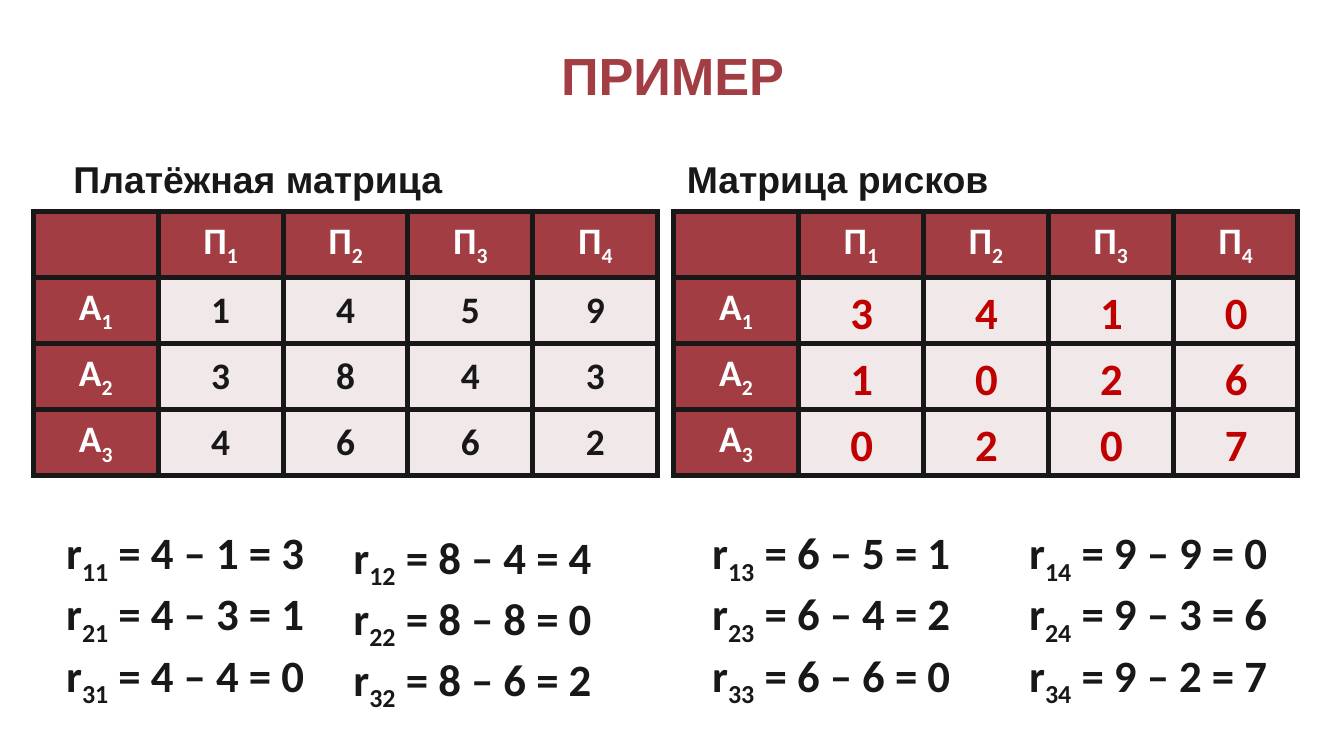
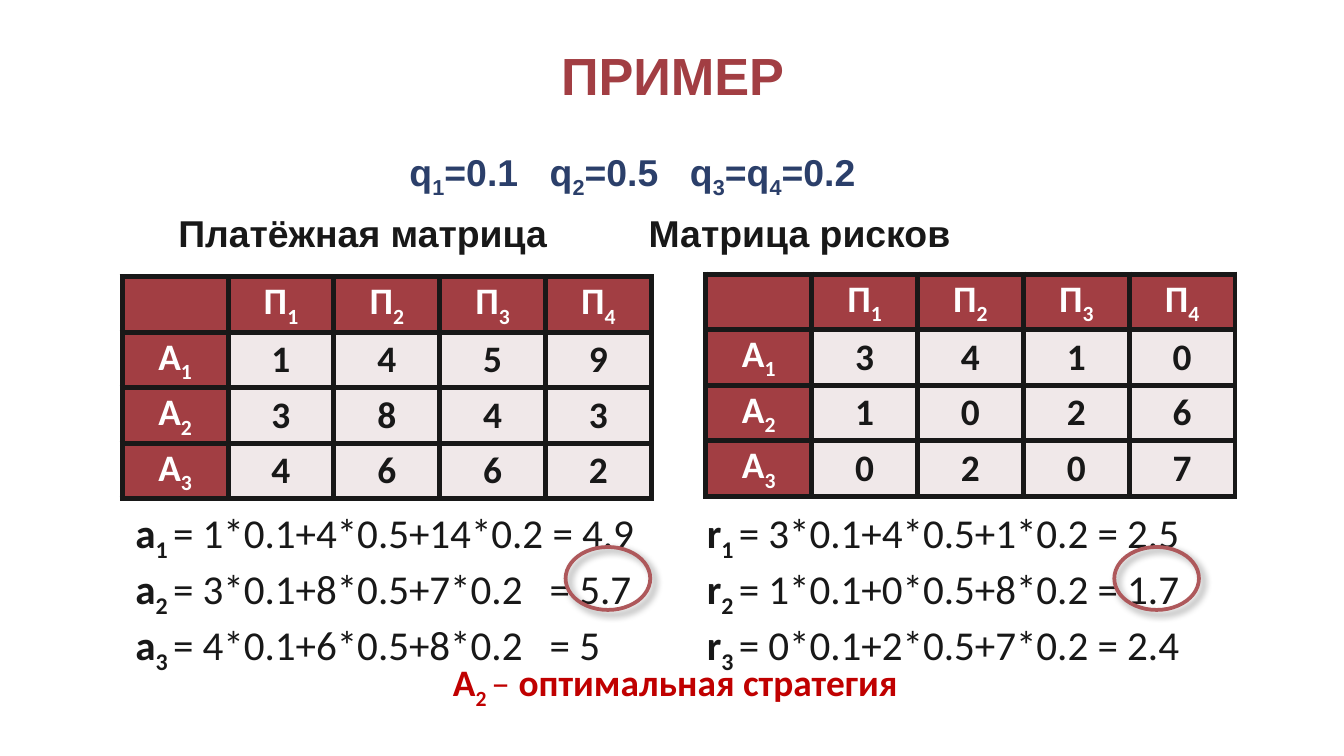
from dataclasses import dataclass

from pptx import Presentation
from pptx.dml.color import RGBColor
from pptx.enum.shapes import MSO_SHAPE
from pptx.enum.text import MSO_ANCHOR, MSO_AUTO_SIZE, PP_ALIGN
from pptx.oxml import parse_xml
from pptx.oxml.ns import nsdecls
from pptx.slide import Slide
from pptx.text.text import _Paragraph
from pptx.util import Cm, Pt

LEFT, CENTER, JUSTIFY = PP_ALIGN.LEFT, PP_ALIGN.CENTER, PP_ALIGN.JUSTIFY
TOP, MIDDLE = MSO_ANCHOR.TOP, MSO_ANCHOR.MIDDLE
GROW, FIXED = MSO_AUTO_SIZE.SHAPE_TO_FIT_TEXT, MSO_AUTO_SIZE.NONE
ELLIPSE = MSO_SHAPE.OVAL

MAROON = RGBColor(0xA2, 0x3E, 0x43)
ROSE = RGBColor(0xAE, 0x58, 0x5B)
PALE = RGBColor(0xF0, 0xE8, 0xE9)
INK = RGBColor(0x18, 0x18, 0x18)
NAVY = RGBColor(0x2B, 0x3F, 0x6A)
RED = RGBColor(0xC0, 0x00, 0x00)
WHITE = RGBColor(0xFF, 0xFF, 0xFF)

HEADING_FONT, BODY_FONT = "Arial", "Calibri"

PAYOFFS = [[1, 4, 5, 9], [3, 8, 4, 3], [4, 6, 6, 2]]
COLUMN_MAXIMA = [max(column) for column in zip(*PAYOFFS)]
RISKS = [[best - value for best, value in zip(COLUMN_MAXIMA, row)] for row in PAYOFFS]


@dataclass(frozen=True)
class Label:
    """A text box; lengths are centimetres. See write_markup for the text."""
    lines: list[str]
    left: float
    top: float
    width: float
    height: float
    size: float = 20
    color: RGBColor = INK
    font: str = BODY_FONT
    align: PP_ALIGN = LEFT
    anchor: MSO_ANCHOR = TOP
    auto_size: MSO_AUTO_SIZE = GROW
    wrap: bool = True
    tabs: tuple[float, ...] = ()


@dataclass(frozen=True)
class Matrix:
    """A strategy table; values may be None to leave the body cells empty."""
    values: list[list[int]] | None
    left: float
    top: float
    column_width: float
    row_height: float


TITLE = Label(["ПРИМЕР"], 1, 0.53, 23.42, 1.78, 28, MAROON, HEADING_FONT,
              CENTER, MIDDLE, FIXED)


def write_markup(paragraph: _Paragraph, text: str, size: float,
                 color: RGBColor, font: str) -> None:
    """Write bold text; "|" toggles the weight and "~" toggles subscript."""
    for weight_index, segment in enumerate(text.split("|")):
        for script_index, piece in enumerate(segment.split("~")):
            if not piece:
                continue
            run = paragraph.add_run()
            run.text = piece
            formats = {"name": font, "size": Pt(size), "bold": weight_index % 2 == 0}
            for attribute, value in formats.items():
                setattr(run.font, attribute, value)
            run.font.color.rgb = color
            if script_index % 2:
                run._r.get_or_add_rPr().set("baseline", "-25000")


def set_tabs(paragraph: _Paragraph, positions: tuple[float, ...]) -> None:
    stops = "".join(f'<a:tab pos="{Cm(position)}" algn="l"/>' for position in positions)
    paragraph._p.get_or_add_pPr().append(
        parse_xml(f'<a:tabLst {nsdecls("a")}>{stops}</a:tabLst>'))


def add_label(slide: Slide, label: Label) -> None:
    box = slide.shapes.add_textbox(Cm(label.left), Cm(label.top),
                                   Cm(label.width), Cm(label.height))
    frame = box.text_frame
    formats = {"word_wrap": label.wrap, "auto_size": label.auto_size,
               "vertical_anchor": label.anchor}
    for attribute, value in formats.items():
        setattr(frame, attribute, value)
    for index, line in enumerate(label.lines):
        paragraph = frame.add_paragraph() if index else frame.paragraphs[0]
        paragraph.alignment = label.align
        if label.tabs:
            set_tabs(paragraph, label.tabs)
        write_markup(paragraph, line, label.size, label.color, label.font)


def add_borders(cell) -> None:
    properties = cell._tc.get_or_add_tcPr()
    for index, side in enumerate(("lnL", "lnR", "lnT", "lnB")):
        properties.insert(index, parse_xml(
            f'<a:{side} {nsdecls("a")} w="{Pt(3)}"><a:solidFill>'
            f'<a:srgbClr val="{INK}"/></a:solidFill></a:{side}>'))


def add_matrix(slide: Slide, matrix: Matrix) -> None:
    rows, columns = len(PAYOFFS) + 1, len(PAYOFFS[0]) + 1
    table = slide.shapes.add_table(
        rows, columns, Cm(matrix.left), Cm(matrix.top),
        Cm(matrix.column_width * columns), Cm(matrix.row_height * rows)).table
    for column in table.columns:
        column.width = Cm(matrix.column_width)
    for row in table.rows:
        row.height = Cm(matrix.row_height)
    cell_formats = {"margin_left": Cm(0.18), "margin_right": Cm(0.18),
                    "margin_top": 0, "margin_bottom": 0, "vertical_anchor": MIDDLE}
    for row in range(rows):
        for column in range(columns):
            cell = table.cell(row, column)
            is_header = row == 0 or column == 0
            if row == column == 0:
                text = ""
            elif row == 0:
                text = f"П~{column}~"
            elif column == 0:
                text = f"A~{row}~"
            else:
                text = str(matrix.values[row - 1][column - 1]) if matrix.values else ""
            for attribute, value in cell_formats.items():
                setattr(cell, attribute, value)
            cell.fill.solid()
            cell.fill.fore_color.rgb = MAROON if is_header else PALE
            add_borders(cell)
            paragraph = cell.text_frame.paragraphs[0]
            paragraph.alignment = CENTER
            write_markup(paragraph, text, 20, WHITE if is_header else INK, BODY_FONT)


def add_answer_ring(slide: Slide, left: float) -> None:
    ring = slide.shapes.add_shape(ELLIPSE, Cm(left), Cm(10.34), Cm(1.6), Cm(1.19))
    ring.fill.background()
    ring.line.color.rgb = ROSE
    ring.line.width = Pt(2)
    ring.shadow.inherit = False
    ring._element.spPr.find(".//{*}effectLst").append(parse_xml(
        f'<a:outerShdw {nsdecls("a")} blurRad="{Pt(4)}" dist="{Pt(3)}" dir="2700000" '
        'rotWithShape="0"><a:srgbClr val="000000"><a:alpha val="40000"/></a:srgbClr>'
        '</a:outerShdw>'))


def build_risk_slide(slide: Slide) -> None:
    """Derive each risk from the column maximum of the payoffs."""
    add_label(slide, TITLE)
    add_label(slide, Label(["Платёжная матрица"], 1.14, 2.82, 7.87, 1.12,
                           font=HEADING_FONT))
    add_matrix(slide, Matrix(PAYOFFS, 0.63, 3.99, 2.36, 1.25))
    add_label(slide, Label(["Матрица рисков"], 12.73, 2.82, 11.81, 1.12,
                           font=HEADING_FONT, align=JUSTIFY, anchor=MIDDLE))
    add_matrix(slide, Matrix(None, 12.73, 3.99, 2.36, 1.25))
    formula_places = [(1, 9.8), (6.43, 9.88), (13.21, 9.8), (19.2, 9.8)]
    for column, (left, top) in enumerate(formula_places):
        best = COLUMN_MAXIMA[column]
        formulas = [f"r~{row + 1}{column + 1}~ = {best} – {values[column]} = {best - values[column]}"
                    for row, values in enumerate(PAYOFFS)]
        add_label(slide, Label(formulas, left, top, 5.21, 3.33, size=24))
        for row, risks in enumerate(RISKS):
            add_label(slide, Label([str(risks[column])], 15.18 + 2.36 * column,
                                   5.26 + 1.245 * row, 2.21, 1.27, size=24,
                                   color=RED, align=CENTER))


def build_strategy_slide(slide: Slide) -> None:
    """Weigh both matrices by probability and name the best strategy."""
    add_label(slide, TITLE)
    add_label(slide, Label(["Платёжная матрица\t\tМатрица рисков"], 3.12, 3.84, 19.2, 1.12,
                           font=HEADING_FONT, align=JUSTIFY, anchor=MIDDLE))
    add_matrix(slide, Matrix(PAYOFFS, 2.31, 5.23, 2, 1.05))
    add_label(slide, Label(["a~1 ~|= 1*0.1+4*0.5+14*0.2 = 4.9",
                            "a~2 ~|= 3*0.1+8*0.5+7*0.2\t= 5.7",
                            "a~3 ~|= 4*0.1+6*0.5+8*0.2\t= 5"],
                           2.31, 9.47, 10.21, 3.07, size=22, tabs=(7.83,)))
    add_matrix(slide, Matrix(RISKS, 13.34, 5.18, 2, 1.05))
    add_label(slide, Label(["q~1~=0.1\tq~2~=0.5\tq~3~=q~4~=0.2"], 7.49, 2.69, 11.2, 1.12,
                           color=NAVY, font=HEADING_FONT, tabs=(2.65, 5.3)))
    add_label(slide, Label(["r~1 ~|= 3*0.1+4*0.5+1*0.2 = 2.5",
                            "r~2 ~|= 1*0.1+0*0.5+8*0.2 = 1.7",
                            "r~3 ~|= 0*0.1+2*0.5+7*0.2 = 2.4"],
                           13.11, 9.47, 10.21, 3.07, size=22))
    for left in (10.69, 21.06):
        add_answer_ring(slide, left)
    add_label(slide, Label(["А~2 ~|– |оптимальная стратегия"], 8.31, 12.34, 9.02, 1.12,
                           color=RED, wrap=False))


def main() -> None:
    presentation = Presentation()
    presentation.slide_width = Cm(25.4)
    presentation.slide_height = Cm(14.29)
    blank_layout = presentation.slide_layouts[6]
    for build in (build_risk_slide, build_strategy_slide):
        build(presentation.slides.add_slide(blank_layout))
    presentation.save("out.pptx")


if __name__ == "__main__":
    main()
